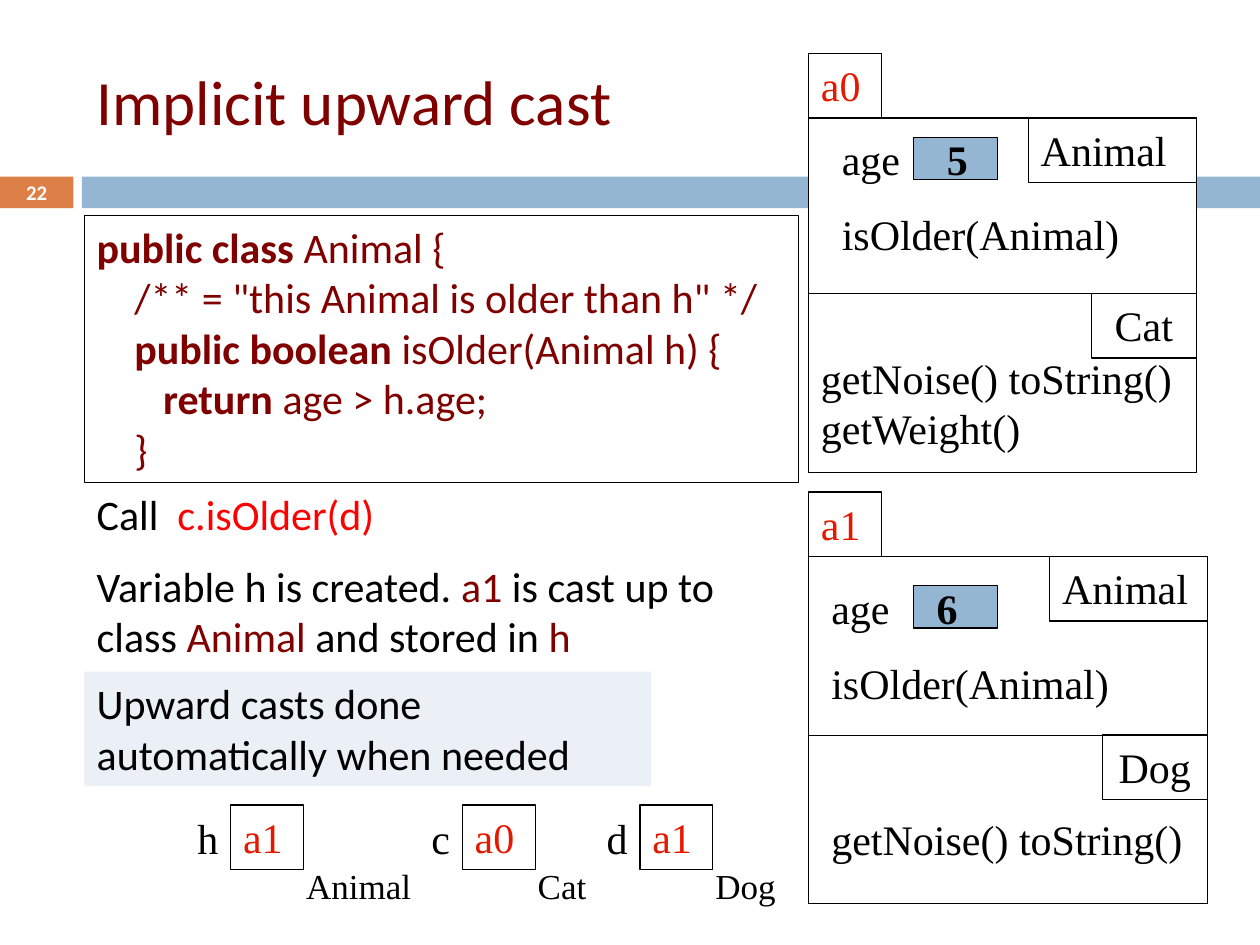
"""Build a slide on implicit upward casts, with object and variable diagrams."""
from dataclasses import dataclass
from typing import Any

from lxml.etree import SubElement
from pptx import Presentation
from pptx.dml.color import RGBColor
from pptx.enum.shapes import MSO_CONNECTOR as Link, MSO_SHAPE as Form
from pptx.enum.text import MSO_ANCHOR as Anchor, PP_ALIGN as Align
from pptx.oxml.ns import qn
from pptx.util import Cm, Pt

BLACK, WHITE, RED, NAME = "000000", "FFFFFF", "FF0000", "E41900"
MAROON, BLUE, PALE, ORANGE = "800000", "94B6D2", "EAF0F6", "DD8047"
SANS, SERIF = "Calibri", "Times New Roman"


def hue(code):
    return RGBColor.from_string(code)


@dataclass
class Page:
    slide: Any
    font: str = SERIF
    size: float = 24
    ink: str = BLACK
    edge: float = 0.75

    def label(self, shape, paras, size=None, ink=None, bold=False, font=None,
              align=Align.LEFT, anchor=Anchor.TOP, gap=14, dents=()):
        frame = shape.text_frame
        frame.word_wrap = True
        frame.vertical_anchor = anchor
        for i, parts in enumerate(paras):
            para = frame.add_paragraph() if i else frame.paragraphs[0]
            para.alignment = align
            if i:
                para.space_before = Pt(gap)
            if dents:
                para._p.get_or_add_pPr().set("marL", str(Cm(dents[i])))
            if isinstance(parts, str):
                para.text = parts
                looks = [(ink or self.ink, bold)] * len(para.runs)
            else:
                for words, _, _ in parts:
                    para.add_run().text = words
                looks = [part[1:] for part in parts]
            for run, (code, strong) in zip(para.runs, looks):
                run.font.name = font or self.font
                run.font.size = Pt(size or self.size)
                run.font.bold = strong
                run.font.color.rgb = hue(code)

    def text(self, x, y, w, h, *paras, **look):
        box = self.slide.shapes.add_textbox(Cm(x), Cm(y), Cm(w), Cm(h))
        self.label(box, paras, **look)

    def rect(self, x, y, w, h, *paras, fill=None, edge=True, **look):
        box = self.slide.shapes.add_shape(Form.RECTANGLE, Cm(x), Cm(y), Cm(w), Cm(h))
        box.shadow.inherit = False
        if fill:
            box.fill.solid()
            box.fill.fore_color.rgb = hue(fill)
        else:
            box.fill.background()
        if edge:
            box.line.color.rgb = hue(self.ink)
            box.line.width = Pt(self.edge)
        else:
            box.line.fill.background()
        if paras:
            self.label(box, paras, **look)

    def rule(self, x, y, end):
        line = self.slide.shapes.add_connector(Link.STRAIGHT, Cm(x), Cm(y), Cm(end), Cm(y))
        line.line.color.rgb = hue(self.ink)
        line.line.width = Pt(self.edge)
        SubElement(line._element.spPr, qn("a:effectLst"))

    def object(self, name, kind, age, own, top, wide, high, tag, split, left, body, mark, last):
        x = 16.3
        right = x + wide
        self.rect(x, top, wide, high, fill=WHITE)
        self.rect(x, top - 1.3, 1.47, 1.3, name, ink=NAME)
        self.rect(right - tag, top, tag, 1.3, "Animal")
        self.rect(right - 2.12, split, 2.12, 1.3, kind, align=Align.CENTER)
        self.rule(x, split, right - 1.69)
        self.text(*last, 7.82, 2.3, own)
        self.text(left, body, 7.4, 2.82, "age", "isOlder(Animal)")
        self.rect(18.42, body + 0.2, 1.69, 0.85, fill=BLUE)
        self.text(mark, body, 0.85, 1.3, age, bold=True)

    def var(self, x, name, value, kind):
        y = 16.23
        self.text(x - 1.07, y + 0.03, 1.07, 1.27, name, align=Align.RIGHT)
        self.rect(x, y, 1.47, 1.3, value, ink=NAME)
        self.text(x + 1.27, y + 1.08, 3.38 if kind == "Animal" else 1.9, 1.1, kind, size=20)


def main():
    deck = Presentation()
    deck.slide_width, deck.slide_height = Cm(25.4), Cm(19.05)
    page = Page(deck.slides.add_slide(deck.slide_layouts[6]))

    page.rect(0, 3.56, 1.48, 0.64, fill=ORANGE, edge=False)
    page.rect(1.65, 3.56, 23.75, 0.64, fill=BLUE, edge=False)
    page.text(1.7, 0.64, 22.65, 2.75, "Implicit upward cast", size=36, ink=MAROON,
              font=SANS, anchor=Anchor.MIDDLE)
    page.text(0, 3.54, 1.48, 0.68, "22", size=11.9, ink=WHITE, bold=True,
              font=SANS, align=Align.CENTER, anchor=Anchor.MIDDLE)

    page.object("a0", "Cat", "5", "getNoise() toString()\vgetWeight()", top=2.38, wide=7.82,
                high=7.14, tag=3.39, split=5.92, left=16.72, body=2.57, mark=18.84,
                last=(16.3, 6.98))
    page.object("a1", "Dog", "6", "getNoise() toString()", top=11.22, wide=8.04,
                high=6.99, tag=3.18, split=14.82, left=16.51, body=11.61, mark=18.63,
                last=(16.51, 16.28))

    page.rect(1.7, 4.34, 14.4, 5.39,
              [("public class", MAROON, True), (" Animal {", MAROON, False)],
              '/** = "this Animal is older than h" */',
              [("public boolean ", MAROON, True), ("isOlder(Animal h) {", MAROON, False)],
              [("return ", MAROON, True), ("age > h.age;", MAROON, False)],
              "}",
              ink=MAROON, font=SANS, gap=0, dents=(0, 0.76, 0.76, 1.34, 0.76))
    page.text(1.7, 9.73, 13.54, 3.76,
              [("Call  ", BLACK, False), ("c.isOlder(d)", RED, False)],
              [("Variable h is created. ", BLACK, False), ("a1", MAROON, False),
               (" is cast up to class ", BLACK, False), ("Animal", MAROON, False),
               (" and stored in ", BLACK, False), ("h", MAROON, False)],
              font=SANS, gap=12)
    page.rect(1.7, 13.54, 11.43, 2.31, "Upward casts done automatically when needed",
              fill=PALE, edge=False, font=SANS)

    for x, name, value, kind in ((12.9, "d", "a1", "Dog"), (9.32, "c", "a0", "Cat"),
                                 (4.65, "h", "a1", "Animal")):
        page.var(x, name, value, kind)
    deck.save("out.pptx")


if __name__ == "__main__":
    main()
